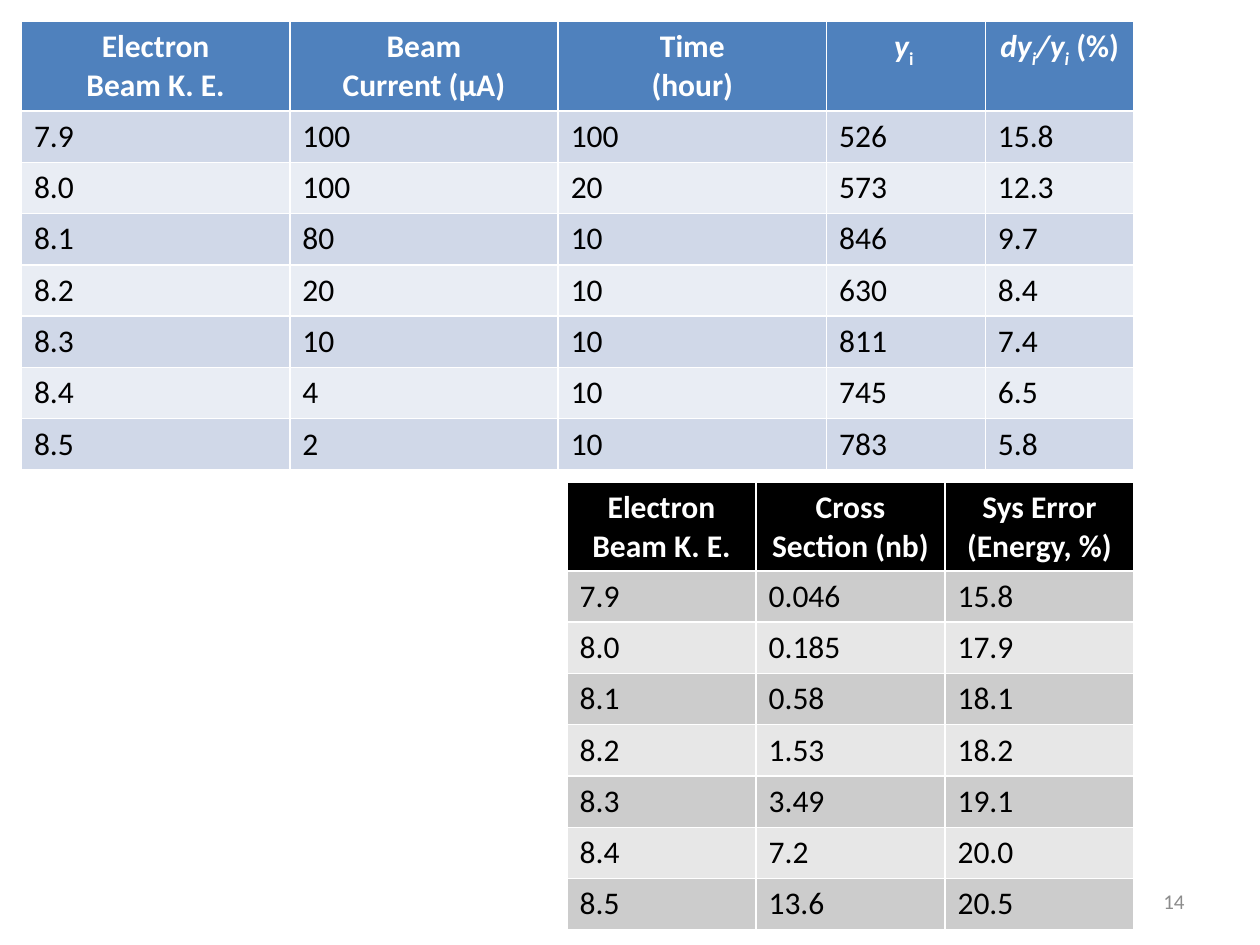
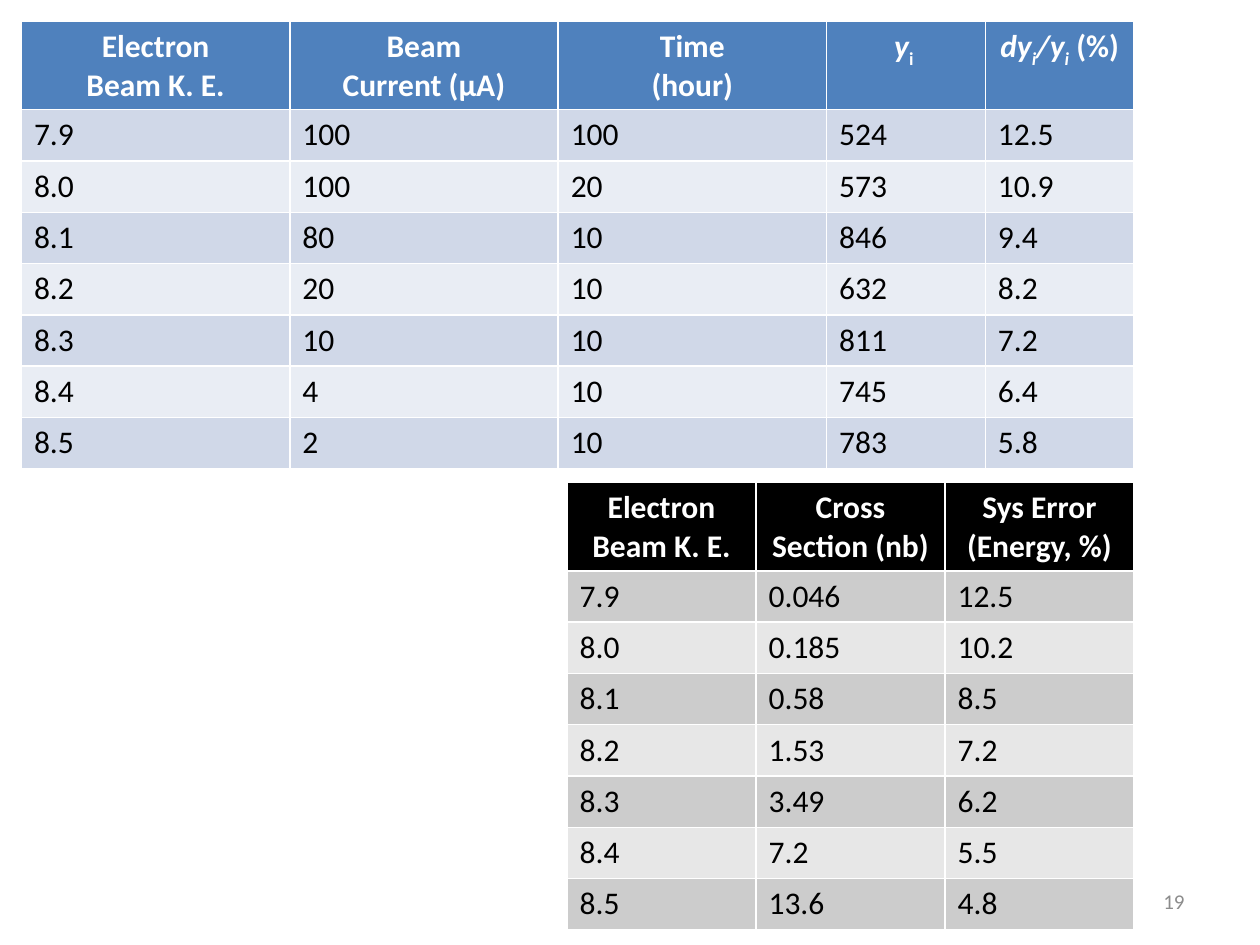
from pptx import Presentation
from pptx.dml.color import RGBColor
from pptx.enum.text import MSO_ANCHOR, PP_ALIGN
from pptx.util import Inches, Pt

FONT = "Calibri"
WHITE = RGBColor(0xFF, 0xFF, 0xFF)
BLACK = RGBColor(0x00, 0x00, 0x00)
GREY = RGBColor(0x8C, 0x8C, 0x8C)
BLUE = RGBColor(0x4F, 0x81, 0xBD)
BLUE_BANDS = RGBColor(0xD0, 0xD8, 0xE8), RGBColor(0xE9, 0xED, 0xF4)
GREY_BANDS = RGBColor(0xCC, 0xCC, 0xCC), RGBColor(0xE7, 0xE7, 0xE7)

TABLE_H = 3.54
HEADER_H = 0.69

ENERGIES = ["7.9", "8.0", "8.1", "8.2", "8.3", "8.4", "8.5"]
CURRENTS = ["100", "100", "80", "20", "10", "4", "2"]
HOURS = ["100", "20", "10", "10", "10", "10", "10"]
CROSS_SECTIONS = ["0.046", "0.185", "0.58", "1.53", "3.49", "7.2", "13.6"]

# Each header is a list of paragraphs; each run is (text, italic, subscript).
ENERGY_HEAD = [[("Electron", False, False)], [("Beam K. E.", False, False)]]
YIELD_HEADS = [
    ENERGY_HEAD,
    [[("Beam", False, False)], [("Current (µA)", False, False)]],
    [[("Time", False, False)], [("(hour)", False, False)]],
    [[("y", True, False), ("i ", False, True)]],
    [[("dy", True, False), ("i", True, True), ("/y", True, False),
      ("i", True, True), (" (%)", False, False)]],
]
ERROR_HEADS = [
    ENERGY_HEAD,
    [[("Cross Section (nb)", False, False)]],
    [[("Sys Error", False, False)], [("(Energy, %)", False, False)]],
]

SLIDES = [
    ("14",
     ["526", "573", "846", "630", "811", "745", "783"],
     ["15.8", "12.3", "9.7", "8.4", "7.4", "6.5", "5.8"],
     ["15.8", "17.9", "18.1", "18.2", "19.1", "20.0", "20.5"]),
    ("19",
     ["524", "573", "846", "632", "811", "745", "783"],
     ["12.5", "10.9", "9.4", "8.2", "7.2", "6.4", "5.8"],
     ["12.5", "10.2", "8.5", "7.2", "6.2", "5.5", "4.8"]),
]


def add_run(p, text, size, color, bold=False, italic=False, sub=False):
    r = p.add_run()
    r.text = text
    r.font.name = FONT
    r.font.size = Pt(size)
    r.font.color.rgb = color
    r.font.bold = bold
    r.font.italic = italic
    if sub:
        r.font._element.set("baseline", "-25000")


def add_data_table(slide, left, top, widths, heads, columns, head_fill, bands):
    n_rows = len(columns[0]) + 1
    tbl = slide.shapes.add_table(n_rows, len(widths), Inches(left), Inches(top),
                                 Inches(sum(widths)), Inches(TABLE_H)).table
    for col, width in zip(tbl.columns, widths):
        col.width = Inches(width)
    for row in tbl.rows:
        row.height = Inches((TABLE_H - HEADER_H) / (n_rows - 1))
    tbl.rows[0].height = Inches(HEADER_H)
    for c, (head, values) in enumerate(zip(heads, columns)):
        cell = tbl.cell(0, c)
        cell.fill.solid()
        cell.fill.fore_color.rgb = head_fill
        tf = cell.text_frame
        for i, runs in enumerate(head):
            p = tf.add_paragraph() if i else tf.paragraphs[0]
            p.alignment = PP_ALIGN.CENTER
            for text, italic, sub in runs:
                add_run(p, text, 18, WHITE, True, italic, sub)
        for i, value in enumerate(values):
            cell = tbl.cell(i + 1, c)
            cell.fill.solid()
            cell.fill.fore_color.rgb = bands[i % 2]
            add_run(cell.text_frame.paragraphs[0], value, 18, BLACK)


prs = Presentation()
prs.slide_width = Inches(10)
prs.slide_height = Inches(7.5)

for number, yields, yield_errors, sys_errors in SLIDES:
    s = prs.slides.add_slide(prs.slide_layouts[6])
    add_data_table(s, 0.17, 0.17, [2.13, 2.13, 2.13, 1.26, 1.18], YIELD_HEADS,
                   [ENERGIES, CURRENTS, HOURS, yields, yield_errors],
                   BLUE, BLUE_BANDS)

    tf = s.shapes.add_textbox(Inches(7.17), Inches(6.95),
                              Inches(2.33), Inches(0.4)).text_frame
    tf.word_wrap = True
    tf.vertical_anchor = MSO_ANCHOR.MIDDLE
    p = tf.paragraphs[0]
    p.alignment = PP_ALIGN.RIGHT
    add_run(p, number, 12, GREY)

    add_data_table(s, 4.5, 3.83, [1.5] * 3, ERROR_HEADS,
                   [ENERGIES, CROSS_SECTIONS, sys_errors], BLACK, GREY_BANDS)

prs.save("out.pptx")
